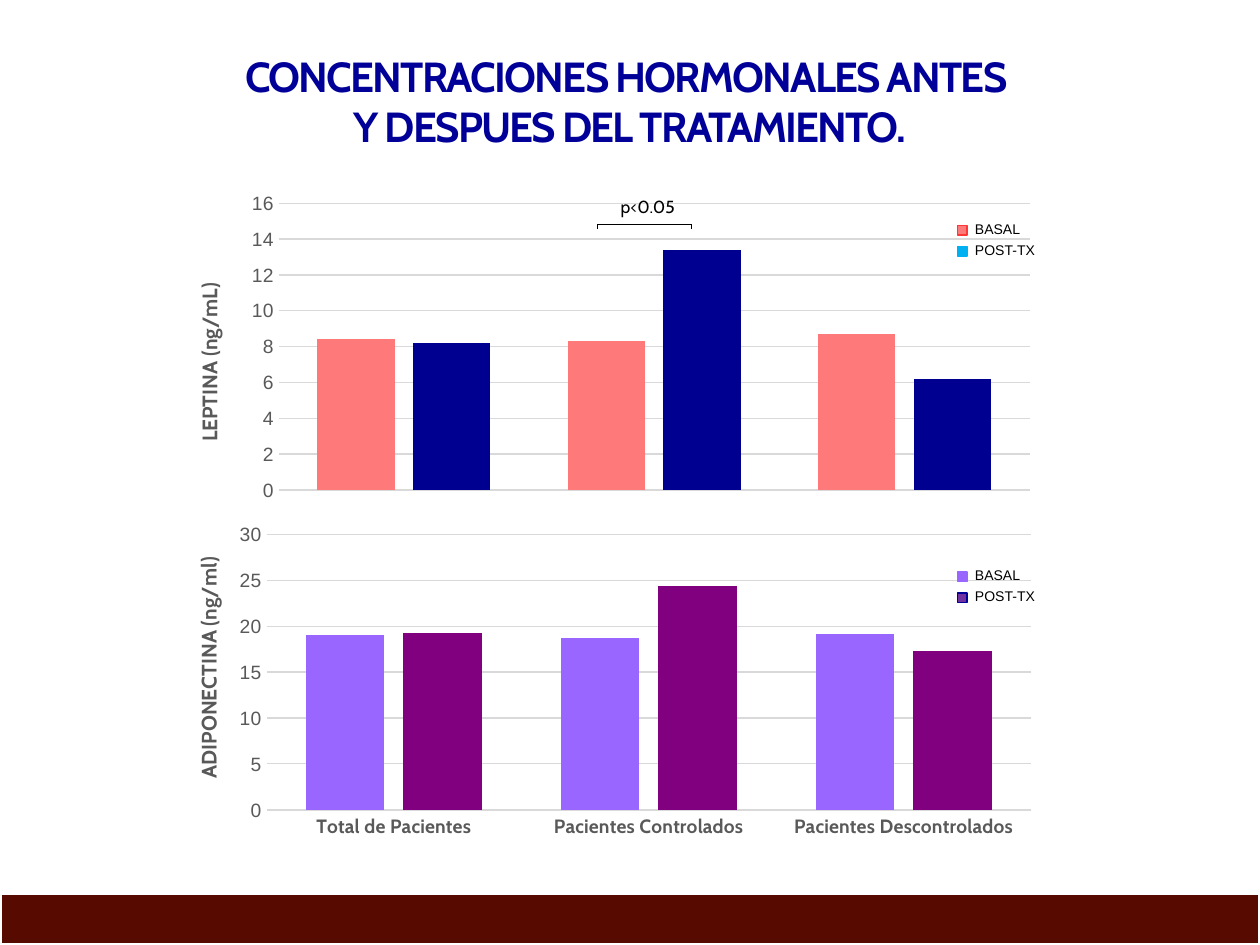
"""Build a slide that compares hormone levels before and after treatment."""
from lxml.etree import SubElement as Sub
from pptx import Presentation
from pptx.chart.data import CategoryChartData as Data
from pptx.dml.color import RGBColor as Rgb
from pptx.enum.chart import XL_CHART_TYPE as Kind, XL_TICK_MARK as Tick
from pptx.enum.shapes import MSO_CONNECTOR as Conn, MSO_SHAPE as Shape
from pptx.enum.text import MSO_ANCHOR as Anchor, PP_ALIGN as Align
from pptx.oxml import parse_xml
from pptx.oxml.ns import nsdecls, qn
from pptx.util import Pt

TITLE = "CONCENTRACIONES HORMONALES ANTES \vY DESPUES DEL TRATAMIENTO."
GROUPS = ["Total de Pacientes", "Pacientes Controlados", "Pacientes Descontrolados"]
NAMES = ["BASAL", "POST-TX"]
CHARTS = [
    dict(box=(93.6, 292.3, 510.5, 198.7), name="ADIPONECTINA (ng/ml)", top=30, step=5,
         plot=(0.115, 0.066, 0.856, 0.792), head=(0.03, 0.12), cats=True,
         vals=[(19, 18.7, 19.1), (19.3, 24.4, 17.3)], fills=["9966FF", "800080"],
         keys=[("9966FF", "9966FF"), ("7030A0", "000099")], key_y=326.7),
    dict(box=(99.4, 105.8, 499, 185), name="LEPTINA (ng/mL)", top=16, step=2,
         plot=(0.12, 0.056, 0.86, 0.886), head=(0.02, 0.29), cats=False,
         vals=[(8.4, 8.3, 8.7), (8.2, 13.4, 6.2)], fills=["FE7979", "000090"],
         keys=[("FE7979", "FE3737"), ("00B0F0", "00B0F0")], key_y=128.9),
]
LEFT, RIGHT, TOP = 341.6, 395.3, 128.2
BRACKET = [(LEFT, TOP, RIGHT, TOP), (LEFT, TOP, LEFT, TOP + 2.6), (RIGHT, TOP, RIGHT, TOP + 2.6)]
HEAD = dict(name="Cabin", size=Pt(24), bold=True)
NOTE = dict(name="Cabin", size=Pt(10), bold=False)
KEY = dict(name="Arial", size=Pt(8), bold=False)
UNIT = dict(name="Cabin", size=Pt(12), bold=True)
TICK = dict(name="Arial", size=Pt(11), bold=False)
CAT = dict(name="Cabin", size=Pt(11), bold=True)


def put(obj, form):
    for key, val in form.items():
        setattr(obj, key, val)


def ink(part, color):
    if hasattr(part, "solid"):
        part.solid()
        part.fore_color.rgb = Rgb.from_string(color)
    else:
        part.color.rgb = Rgb.from_string(color)


def rule(line, color, width):
    ink(line, color)
    line.width = Pt(width)


def write(slide, box, text, form, color="000000", align=Align.LEFT, anchor=Anchor.TOP):
    frame = slide.shapes.add_textbox(*map(Pt, box)).text_frame
    put(frame, dict(word_wrap=True, vertical_anchor=anchor))
    frame.text = text
    para = frame.paragraphs[0]
    para.alignment = align
    for run in para.runs:
        put(run.font, form)
        ink(run.font, color)
    return para


def block(slide, box, fill, edge, width):
    rect = slide.shapes.add_shape(Shape.RECTANGLE, *map(Pt, box))
    rect.shadow.inherit = False
    ink(rect.fill, fill)
    rule(rect.line, edge, width)


def place(node, spots):
    lay = node.find(qn("c:layout"))
    if lay is None:
        lay = parse_xml(f"<c:layout {nsdecls('c')}/>")
        node.insert(0, lay)
    for old in list(lay):
        lay.remove(old)
    man = Sub(lay, qn("c:manualLayout"))
    for key, val in spots:
        Sub(man, qn("c:" + key)).set("val", str(val))


def plot(slide, item):
    data = Data()
    data.categories = GROUPS
    for name, vals in zip(NAMES, item["vals"]):
        data.add_series(name, vals)
    chart = slide.shapes.add_chart(Kind.COLUMN_CLUSTERED, *map(Pt, item["box"]), data).chart
    put(chart, dict(has_legend=False, has_title=False))
    put(chart.font, TICK)
    bars = chart.plots[0]
    put(bars, dict(gap_width=100, overlap=-24, vary_by_categories=False))
    for bar, fill in zip(bars.series, item["fills"]):
        ink(bar.format.fill, fill)
    cat, val = chart.category_axis, chart.value_axis
    put(cat, dict(visible=item["cats"], major_tick_mark=Tick.NONE))
    put(val, dict(minimum_scale=0, maximum_scale=item["top"], major_unit=item["step"],
                  major_tick_mark=Tick.NONE, has_major_gridlines=True))
    for axis, form in ((cat, CAT), (val, TICK)):
        put(axis.tick_labels.font, form)
        ink(axis.tick_labels.font, "595959")
    rule(cat.format.line, "D9D9D9", 1)
    rule(val.major_gridlines.format.line, "D9D9D9", 0.75)
    val.format.line.fill.background()
    frame = val.axis_title.text_frame
    frame.text = item["name"]
    font = frame.paragraphs[0].runs[0].font
    put(font, UNIT)
    ink(font, "595959")
    modes = [("xMode", "edge"), ("yMode", "edge")]
    place(val.axis_title._element, modes + list(zip("xy", item["head"])))
    area = chart._chartSpace.find(".//" + qn("c:plotArea"))
    place(area, [("layoutTarget", "inner")] + modes + list(zip("xywh", item["plot"])))


def legend(slide, item):
    for row, (name, (fill, edge)) in enumerate(zip(NAMES, item["keys"])):
        top = item["key_y"] + 12 * row
        block(slide, (547.2, top, 5.6, 5.6), fill, edge, 1)
        write(slide, (550, top - 6.3, 85, 17), name, KEY)


def main():
    deck = Presentation()
    put(deck, dict(slide_width=Pt(720), slide_height=Pt(540)))
    slide = deck.slides.add_slide(deck.slide_layouts[6])
    para = write(slide, (36, 18.7, 648, 77.8), TITLE, HEAD, "000099", Align.CENTER, Anchor.MIDDLE)
    for run in para.runs:
        run.font._element.set("spc", "-100")
    for item in CHARTS:
        plot(slide, item)
    for item in CHARTS:
        legend(slide, item)
    write(slide, (327.6, 108.7, 85, 19.4), "p<0.05", NOTE, align=Align.CENTER)
    for ends in BRACKET:
        line = slide.shapes.add_connector(Conn.STRAIGHT, *map(Pt, ends))
        rule(line.line, "000000", 0.75)
        Sub(line._element.spPr, qn("a:effectLst"))
    block(slide, (0, 510.5, 720, 29.5), "560A00", "FFFFFF", 2)
    deck.save("out.pptx")


if __name__ == "__main__":
    main()
